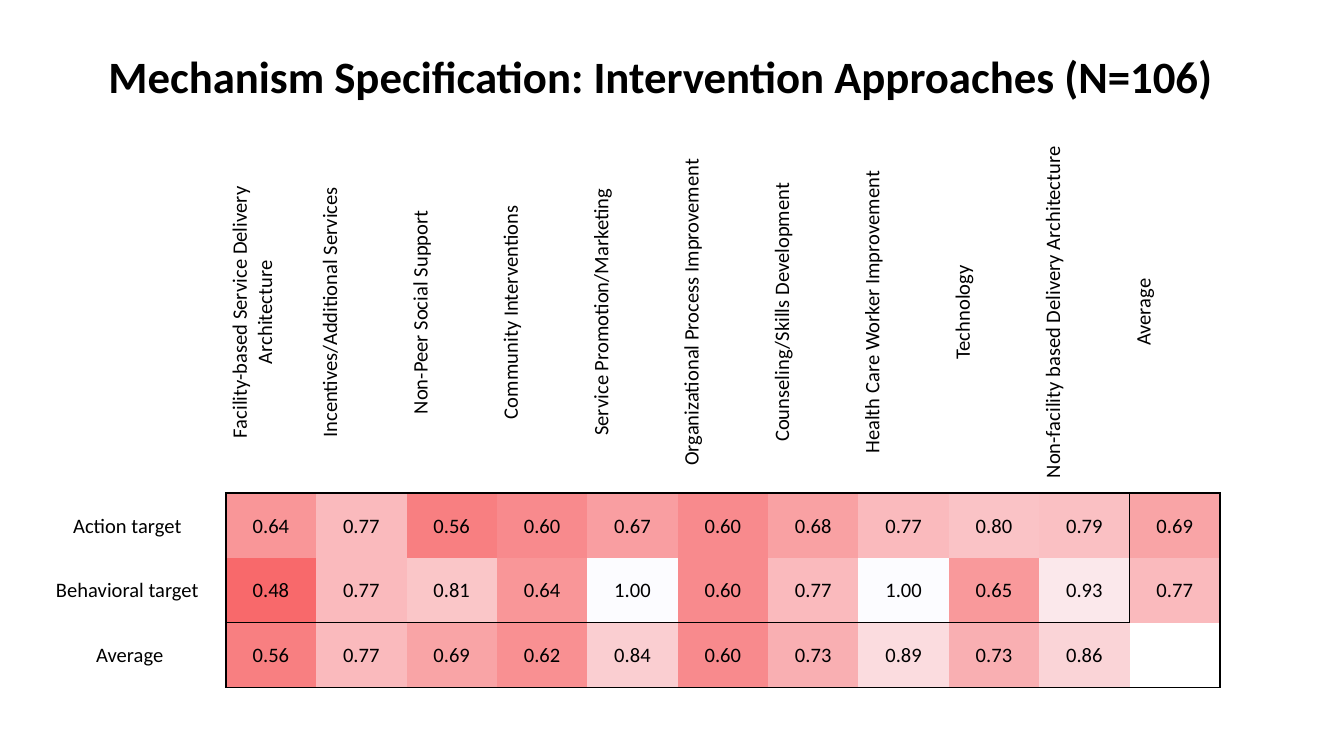
"""Build a slide with a heat-map table of mechanism specification by intervention approach."""
from lxml import etree
from pptx import Presentation
from pptx.dml.color import RGBColor
from pptx.enum.text import MSO_ANCHOR, MSO_AUTO_SIZE, PP_ALIGN
from pptx.oxml.ns import qn
from pptx.util import Inches, Pt

CENTER = PP_ALIGN.CENTER
TOP = MSO_ANCHOR.TOP
MIDDLE = MSO_ANCHOR.MIDDLE
NO_AUTOFIT = MSO_AUTO_SIZE.NONE
BLACK = RGBColor(0x00, 0x00, 0x00)
LOW_RED = RGBColor(0xF8, 0x69, 0x6B)
HIGH_WHITE = RGBColor(0xFC, 0xFC, 0xFF)
LOW, HIGH = 0.48, 1.00
PLAIN_STYLE = "{2D5ABB26-0587-4C30-8999-92F81FD0307C}"

APPROACHES = [
    "Facility-based Service Delivery Architecture",
    "Incentives/Additional Services",
    "Non-Peer Social Support",
    "Community Interventions",
    "Service Promotion/Marketing",
    "Organizational Process Improvement",
    "Counseling/Skills Development",
    "Health Care Worker Improvement",
    "Technology",
    "Non-facility based Delivery Architecture",
    "Average",
]
SCORES = {
    "Action target ": [0.64, 0.77, 0.56, 0.60, 0.67, 0.60, 0.68, 0.77, 0.80, 0.79, 0.69],
    "Behavioral target ": [0.48, 0.77, 0.81, 0.64, 1.00, 0.60, 0.77, 1.00, 0.65, 0.93, 0.77],
    "Average": [0.56, 0.77, 0.69, 0.62, 0.84, 0.60, 0.73, 0.89, 0.73, 0.86, None],
}
CELL_FORMAT = {
    "margin_left": Inches(0.01),
    "margin_right": Inches(0.01),
    "margin_top": Inches(0.01),
    "margin_bottom": 0,
    "vertical_anchor": MIDDLE,
}


def write_text(para, text, size, bold=False):
    para.alignment = CENTER
    span = para.add_run()
    span.text = text
    span.font.color.rgb = BLACK
    for name, value in {"name": "Calibri", "size": Pt(size), "bold": bold}.items():
        setattr(span.font, name, value)


def add_borders(cell, sides):
    properties = cell._tc.get_or_add_tcPr()
    for side, shown in sides.items():
        line = etree.SubElement(properties, qn(f"a:ln{side}"), w=str(Pt(1)))
        if shown:
            fill = etree.SubElement(line, qn("a:solidFill"))
            etree.SubElement(fill, qn("a:srgbClr"), val=str(BLACK))
        else:
            etree.SubElement(line, qn("a:noFill"))


deck = Presentation()
deck.slide_width = Inches(10)
deck.slide_height = Inches(10 * 9 / 16)
page = deck.slides.add_slide(deck.slide_layouts[5])

title = page.shapes.title
title_box = {"left": 0.5, "top": 0.31, "width": 8.83, "height": 0.5}
for name, value in title_box.items():
    setattr(title, name, Inches(value))
frame = title.text_frame
for name, value in {"auto_size": NO_AUTOFIT, "vertical_anchor": TOP, "word_wrap": True}.items():
    setattr(frame, name, value)
write_text(frame.paragraphs[0], "Mechanism Specification: Intervention Approaches (N=106)", 24, True)

rows = [[None, *APPROACHES]] + [[label, *scores] for label, scores in SCORES.items()]
row_count, column_count = len(rows), len(rows[0])
last_row, last_column = row_count - 1, column_count - 1
graphic = page.shapes.add_table(
    row_count, column_count, Inches(0.25), Inches(0.98), Inches(8.83), Inches(3.92)
)
table = graphic.table
table.first_row = False
table.horz_banding = False
table._tbl.tblPr.find(qn("a:tableStyleId")).text = PLAIN_STYLE
for index, column in enumerate(table.columns):
    column.width = Inches(7.4 / len(APPROACHES) if index else 1.43)
for index, row in enumerate(table.rows):
    row.height = Inches(1.45 / len(SCORES) if index else 2.47)

for y, values in enumerate(rows):
    for x, value in enumerate(values):
        cell = table.cell(y, x)
        for name, setting in CELL_FORMAT.items():
            setattr(cell, name, setting)
        left, right = [
            y > 0 and (edge in (1, column_count) or edge == last_column and y < last_row)
            for edge in (x, x + 1)
        ]
        top, bottom = [
            x > 0 and (edge in (1, row_count) or edge == last_row and x < last_column)
            for edge in (y, y + 1)
        ]
        add_borders(cell, {"L": left, "R": right, "T": top, "B": bottom})
        cell.fill.background()
        if y == 0 and x > 0:
            cell._tc.tcPr.set("vert", "vert270")
        if value is None:
            continue
        text = value
        if y > 0 and x > 0:
            text = f"{value:.2f}"
            share = (value - LOW) / (HIGH - LOW)
            shade = [int(a + (b - a) * share) for a, b in zip(LOW_RED, HIGH_WHITE)]
            cell.fill.solid()
            cell.fill.fore_color.rgb = RGBColor(*shade)
        write_text(cell.text_frame.paragraphs[0], text, 11)

deck.save("out.pptx")
